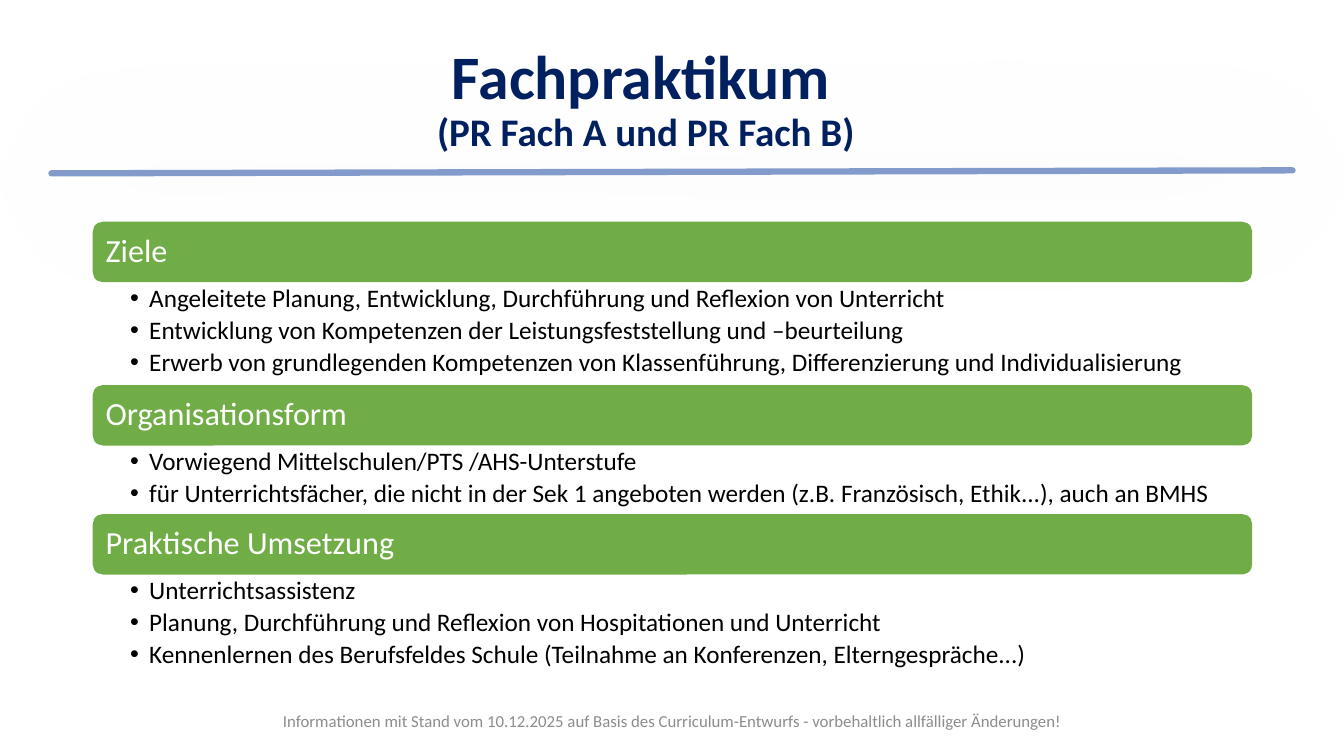
from dataclasses import dataclass

from lxml.etree import SubElement
from pptx import Presentation
from pptx.dml.color import RGBColor
from pptx.enum.shapes import MSO_CONNECTOR, MSO_SHAPE
from pptx.enum.text import MSO_ANCHOR, PP_ALIGN
from pptx.oxml import parse_xml
from pptx.oxml.ns import nsdecls, qn
from pptx.slide import Slide
from pptx.util import Inches, Pt

FONT = "Calibri"
LEFT, TOP, WIDTH = 0.92, 2.2, 11.5
BAR, ROW = 0.6, 0.34


@dataclass
class Block:
    """A green heading with its bullet points."""
    head: str
    points: list[str]


BLOCKS = [
    Block("Ziele", [
        "Angeleitete Planung, Entwicklung, Durchführung und Reflexion von Unterricht",
        "Entwicklung von Kompetenzen der Leistungsfeststellung und –beurteilung",
        "Erwerb von grundlegenden Kompetenzen von Klassenführung, Differenzierung und Individualisierung",
    ]),
    Block("Organisationsform", [
        "Vorwiegend Mittelschulen/PTS /AHS-Unterstufe",
        "für Unterrichtsfächer, die nicht in der Sek 1 angeboten werden (z.B. Französisch, Ethik...), auch an BMHS",
    ]),
    Block("Praktische Umsetzung", [
        "Unterrichtsassistenz",
        "Planung, Durchführung und Reflexion von Hospitationen und Unterricht",
        "Kennenlernen des Berufsfeldes Schule (Teilnahme an Konferenzen, Elterngespräche...)",
    ]),
]


def color(code: str) -> RGBColor:
    """Turn a hex string into a colour."""
    return RGBColor.from_string(code)


def apply(item, **form) -> None:
    """Set each format value on the item."""
    for name, value in form.items():
        setattr(item, name, value)


def write(para, text: str, size: float, code: str, bold: bool = False) -> None:
    """Add a formatted run to a paragraph."""
    run = para.add_run()
    run.text = text
    apply(run.font, name=FONT, size=Pt(size), bold=bold)
    run.font.color.rgb = color(code)


def add_title(slide: Slide) -> None:
    """Place and fill the two-line title."""
    title = slide.shapes.title
    apply(title, left=Inches(3.01), top=Inches(0.77),
          width=Inches(6.79), height=Inches(0.46))
    apply(title.text_frame, vertical_anchor=MSO_ANCHOR.MIDDLE, word_wrap=True)
    para = title.text_frame.paragraphs[0]
    apply(para, alignment=PP_ALIGN.CENTER, line_spacing=0.9)
    write(para, "Fachpraktikum", 44.1, "002060", True)
    write(para, " ", 28.8, "002060", True)
    para.add_line_break()
    write(para, "(PR Fach A und PR Fach B)", 27.9, "002060", True)


def add_rule(slide: Slide) -> None:
    """Draw the blue rule with its soft shadow."""
    rule = slide.shapes.add_connector(
        MSO_CONNECTOR.STRAIGHT, Inches(0.51), Inches(1.72), Inches(12.82), Inches(1.69))
    rule.line.width = Pt(4.5)
    rule.line.color.rgb = color("4369B0")
    line = rule.line._get_or_add_ln()
    line.set("cap", "rnd")
    SubElement(line.find(".//" + qn("a:srgbClr")), qn("a:alpha"), val="66000")
    rule._element.spPr.append(parse_xml(
        f'<a:effectLst {nsdecls("a")}><a:outerShdw blurRad="{Pt(100)}" dist="{Pt(3)}" '
        'dir="5400000" rotWithShape="0"><a:srgbClr val="A6A6A6"><a:alpha val="38000"/>'
        '</a:srgbClr></a:outerShdw></a:effectLst>'))


def add_head(slide: Slide, text: str, top: float) -> None:
    """Draw a green heading bar."""
    bar = slide.shapes.add_shape(
        MSO_SHAPE.ROUNDED_RECTANGLE, Inches(LEFT), Inches(top), Inches(WIDTH), Inches(BAR))
    bar.shadow.inherit = False
    bar.fill.solid()
    bar.fill.fore_color.rgb = color("70AD47")
    bar.line.fill.background()
    apply(bar.text_frame, margin_left=Inches(0.1), vertical_anchor=MSO_ANCHOR.MIDDLE,
          word_wrap=True)
    para = bar.text_frame.paragraphs[0]
    apply(para, alignment=PP_ALIGN.LEFT, line_spacing=0.9)
    write(para, text, 23, "FFFFFF")


def add_list(slide: Slide, points: list[str], top: float) -> None:
    """Write the bullet points under a heading."""
    box = slide.shapes.add_textbox(
        Inches(LEFT), Inches(top), Inches(WIDTH), Inches(ROW * len(points)))
    frame = box.text_frame
    apply(frame, word_wrap=True, margin_left=Inches(0.37), margin_right=Inches(0.18),
          margin_top=Inches(0.03), margin_bottom=Inches(0.03))
    for index, point in enumerate(points):
        para = frame.add_paragraph() if index else frame.paragraphs[0]
        apply(para, level=1, line_spacing=0.9, space_after=Pt(3.5))
        props = para._p.get_or_add_pPr()
        props.set("marL", str(Inches(0.19)))
        props.set("indent", str(Inches(-0.19)))
        SubElement(props, qn("a:buFont"), typeface="Arial")
        SubElement(props, qn("a:buChar"), char="•")
        write(para, point, 18, "000000")


def add_note(slide: Slide) -> None:
    """Write the grey line at the foot."""
    box = slide.shapes.add_textbox(Inches(1.97), Inches(6.95), Inches(9.4), Inches(0.4))
    apply(box.text_frame, word_wrap=True, vertical_anchor=MSO_ANCHOR.MIDDLE)
    para = box.text_frame.paragraphs[0]
    para.alignment = PP_ALIGN.CENTER
    write(para, "Informationen mit Stand vom 10.12.2025 auf Basis des Curriculum-Entwurfs"
          " - vorbehaltlich allfälliger Änderungen!", 12, "8C8C8C")


def main() -> None:
    """Build and save the slide."""
    deck = Presentation()
    apply(deck, slide_width=Inches(13.33), slide_height=Inches(7.5))
    slide = deck.slides.add_slide(deck.slide_layouts[5])
    add_rule(slide)
    add_title(slide)
    top = TOP
    for block in BLOCKS:
        add_head(slide, block.head, top)
        add_list(slide, block.points, top + BAR)
        top += BAR + ROW * len(block.points)
    add_note(slide)
    deck.save("out.pptx")


if __name__ == "__main__":
    main()
